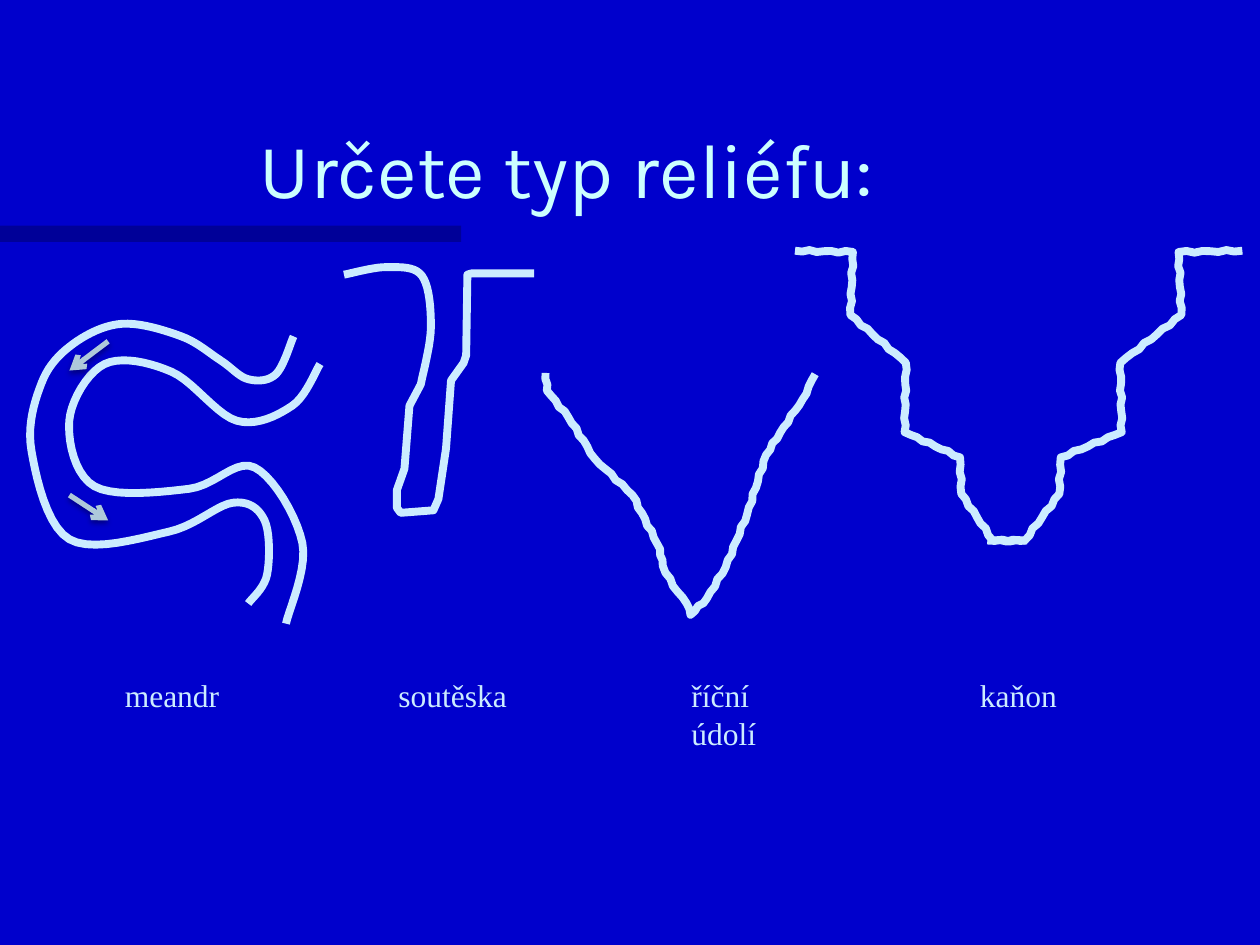
from dataclasses import dataclass
from itertools import accumulate
from math import ceil, dist, sin

from lxml.etree import SubElement
from pptx import Presentation
from pptx.dml.color import RGBColor
from pptx.enum.shapes import MSO_CONNECTOR, MSO_SHAPE
from pptx.enum.text import MSO_ANCHOR, PP_ALIGN
from pptx.oxml.ns import qn
from pptx.util import Cm, Pt

GRID = Cm(2.54) / 100  # relief outlines are plotted on a 1000 x 750 grid


@dataclass(frozen=True)
class Theme:
    background: str = "0000CC"
    bar: str = "000066"
    title: str = "CCFFFF"
    relief: str = "CCECFF"
    flow: str = "AEC9DA"
    title_font: str = "Karla"
    label_font: str = "Times New Roman"
    title_size: float = 44
    label_size: float = 18
    relief_width: float = 4.5
    flow_width: float = 3


def color(value):
    return RGBColor.from_string(value)


def smooth(knots, steps=10):
    """Return a Catmull-Rom curve through the knots: a water-worn bank."""
    padded = [knots[0], *knots, knots[-1]]
    curve = [knots[0]]
    for a, b, c, d in zip(padded, padded[1:], padded[2:], padded[3:]):
        for step in range(1, steps + 1):
            t = step / steps
            curve.append(tuple(
                q + t * (r - p) / 2
                + t ** 2 * (2 * p - 5 * q + 4 * r - s) / 2
                + t ** 3 * (3 * q - p - 3 * r + s) / 2
                for p, q, r, s in zip(a, b, c, d)))
    return curve


def rough(knots, step=6, depth=0.8):
    """Split each leg into short pieces and shift them sideways: a rocky wall."""
    wall = [knots[0]]
    for (x1, y1), (x2, y2) in zip(knots, knots[1:]):
        length = dist((x1, y1), (x2, y2))
        pieces = ceil(length / step)
        for piece in range(1, pieces):
            t = piece / pieces
            shift = depth * sin(2.4 * len(wall)) / length
            wall.append((x1 + t * (x2 - x1) - shift * (y2 - y1),
                         y1 + t * (y2 - y1) + shift * (x2 - x1)))
        wall.append((x2, y2))
    return wall


def walk(start, moves):
    """Return the points reached by making the moves one after another."""
    return list(accumulate(moves, lambda point, move: (point[0] + move[0], point[1] + move[1]),
                           initial=start))


def mirror(points, start_x, stretch):
    """Flip points left to right so that the first one lands on start_x."""
    return [(start_x - stretch * (x - points[0][0]), y) for x, y in points]


def meander():
    inner_bank = [(254, 289), (232, 322), (188, 334), (136, 295), (83, 289), (55, 334),
                  (75, 386), (150, 388), (202, 371), (240, 431), (227, 495)]
    outer_bank = [(233, 267), (219, 297), (197, 301), (175, 286), (144, 267), (97, 257),
                  (58, 273), (33, 304), (25, 358), (55, 428), (134, 422), (185, 399),
                  (210, 413), (212, 456), (197, 479)]
    return [smooth(inner_bank), smooth(outer_bank)]


def gorge():
    rim = [(273, 218), (307, 212), (335, 219), (342, 260), (334, 305)]
    left_wall = [(325, 322), (321, 372), (315, 389)]
    floor = [(315, 403), (318, 407), (344, 405), (348, 396)]
    right_wall = [(354, 356), (358, 302), (368, 288), (370, 282), (371, 218)]
    plateau = [(374, 217), (424, 217)]
    return [smooth(rim) + left_wall + floor + right_wall + plateau]


def river_valley():
    left_slope = [(433, 296), (434, 310), (451, 331), (472, 364), (502, 393), (524, 436),
                  (526, 449), (534, 465), (545, 479)]
    bottom = (548, 488)
    right_slope = [(561, 475), (576, 450), (593, 408), (608, 361), (622, 339), (637, 317),
                   (647, 297)]
    return [rough([*left_slope, bottom, *right_slope])]


def canyon():
    """Return two stepped walls; the right one mirrors the left, slightly wider."""
    rim, floor = (46, 1), (27, 0)
    cliffs = [(-2, 50), (-1, 55), (1, 29)]
    benches = [(44, 38), (44, 20), (25, 37)]
    steps = [move for pair in zip(cliffs, benches) for move in pair]
    left_wall = rough(walk((631, 199), [rim, *steps, floor]))
    return [left_wall, mirror(left_wall, start_x=986, stretch=1.1)]


class SlideBuilder:
    def __init__(self, slide, theme):
        self.slide = slide
        self.theme = theme
        self.slide.background.fill.solid()
        self.slide.background.fill.fore_color.rgb = color(theme.background)

    def bar(self, left, top, width, height, opacity):
        shape = self.slide.shapes.add_shape(
            MSO_SHAPE.RECTANGLE, Cm(left), Cm(top), Cm(width), Cm(height))
        shape.shadow.inherit = False
        shape.line.fill.background()
        shape.fill.solid()
        shape.fill.fore_color.rgb = color(self.theme.bar)
        fill_color = shape.fill._xPr.find(qn("a:solidFill"))[0]
        SubElement(fill_color, qn("a:alpha"), val=str(opacity * 1000))

    def text(self, text, left, top, width, height, font, size, ink, align, anchor):
        shape = self.slide.shapes.add_textbox(Cm(left), Cm(top), Cm(width), Cm(height))
        shape.text_frame.word_wrap = True
        shape.text_frame.vertical_anchor = anchor
        paragraph = shape.text_frame.paragraphs[0]
        paragraph.text = text
        paragraph.alignment = align
        paragraph.font.name = font
        paragraph.font.size = Pt(size)
        paragraph.font.color.rgb = color(ink)

    def title(self, text, left, top, width, height):
        theme = self.theme
        self.text(text, left, top, width, height, theme.title_font, theme.title_size,
                  theme.title, PP_ALIGN.CENTER, MSO_ANCHOR.BOTTOM)

    def label(self, text, left, width, height, align):
        theme = self.theme
        self.text(text, left, 13.5, width, height, theme.label_font, theme.label_size,
                  theme.relief, align, MSO_ANCHOR.TOP)

    def relief(self, points):
        """Draw an open outline through grid points."""
        start, *rest = [(x * GRID, y * GRID) for x, y in points]
        builder = self.slide.shapes.build_freeform(*start)
        builder.add_line_segments(rest, close=False)
        shape = builder.convert_to_shape()
        shape.shadow.inherit = False
        shape.fill.background()
        shape.line.color.rgb = color(self.theme.relief)
        shape.line.width = Pt(self.theme.relief_width)

    def flow_arrow(self, x1, y1, x2, y2):
        arrow = self.slide.shapes.add_connector(
            MSO_CONNECTOR.STRAIGHT, Cm(x1), Cm(y1), Cm(x2), Cm(y2))
        arrow.line.color.rgb = color(self.theme.flow)
        arrow.line.width = Pt(self.theme.flow_width)
        properties = arrow._element.spPr
        SubElement(properties.find(qn("a:ln")), qn("a:tailEnd"), type="arrow")
        effects = SubElement(properties, qn("a:effectLst"))
        shadow = SubElement(effects, qn("a:outerShdw"), blurRad=str(Pt(3.1)),
                            dist=str(Pt(1.8)), dir="5400000", rotWithShape="0")
        black = SubElement(shadow, qn("a:srgbClr"), val="000000")
        SubElement(black, qn("a:alpha"), val="35000")


def main():
    presentation = Presentation()
    presentation.slide_width, presentation.slide_height = Cm(25.4), Cm(19.05)
    slide = presentation.slides.add_slide(presentation.slide_layouts[6])
    builder = SlideBuilder(slide, Theme())

    builder.bar(0, 4.55, 9.3, 0.33, opacity=50)
    builder.title("Určete typ reliéfu:", 0.64, 1.25, 21.59, 3.18)

    reliefs = [
        ("meandr", meander, 1.4, 4.14, 1.02, PP_ALIGN.CENTER),
        ("soutěska", gorge, 6.94, 4.37, 1.02, PP_ALIGN.CENTER),
        ("říční údolí", river_valley, 13.69, 2.97, 1.8, PP_ALIGN.LEFT),
        ("kaňon", canyon, 18.65, 3.76, 1.02, PP_ALIGN.CENTER),
    ]
    for name, outlines, left, width, height, align in reliefs:
        builder.label(name, left, width, height, align)
        for outline in outlines():
            builder.relief(outline)

    builder.flow_arrow(2.18, 6.88, 1.4, 7.47)
    builder.flow_arrow(1.4, 9.98, 2.18, 10.49)

    presentation.save("out.pptx")


if __name__ == "__main__":
    main()
